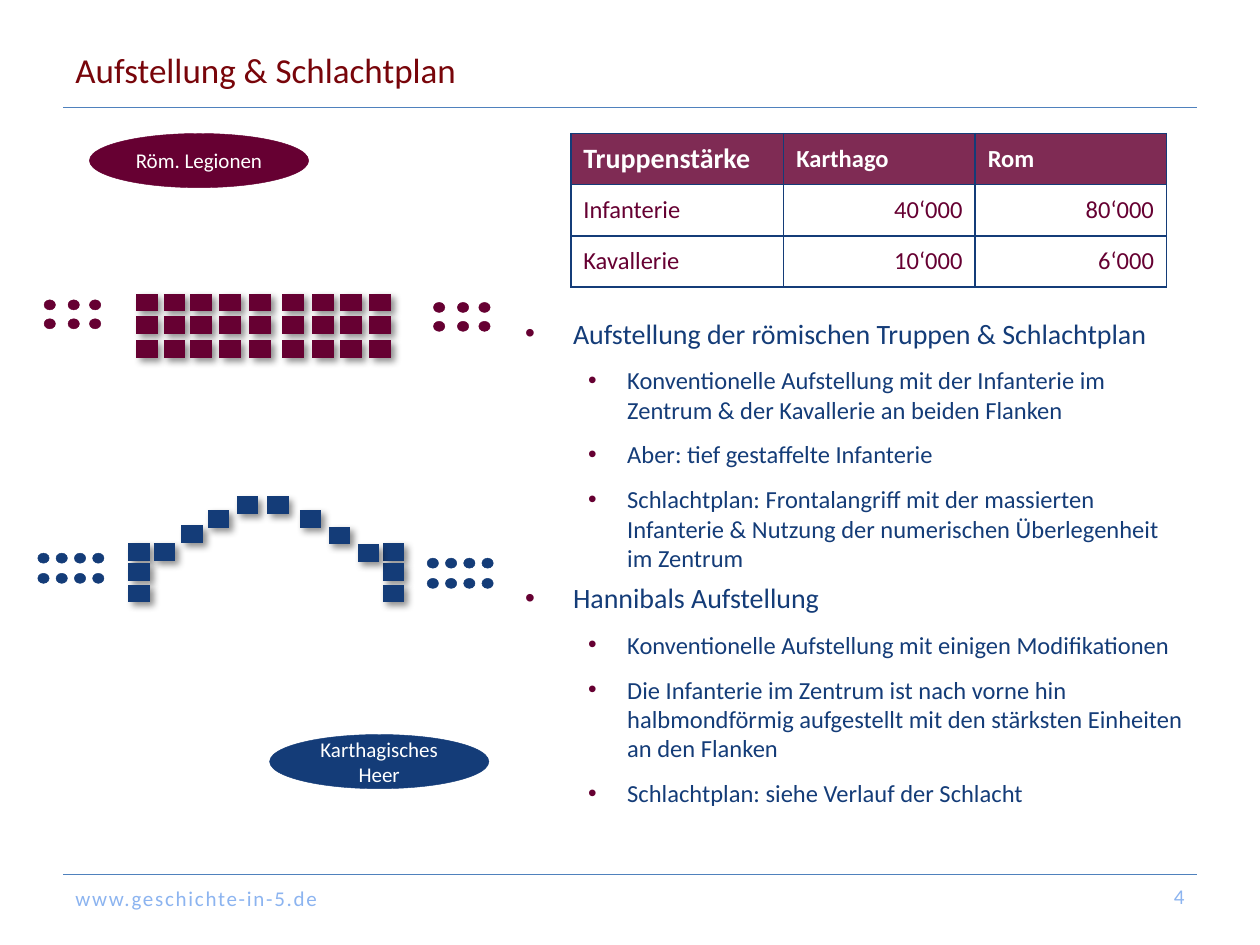
from itertools import product

from lxml import etree
from pptx import Presentation
from pptx.dml.color import RGBColor
from pptx.enum.shapes import MSO_CONNECTOR as Connector, MSO_SHAPE as Shape
from pptx.enum.text import MSO_ANCHOR as Anchor, PP_ALIGN as Align
from pptx.oxml import parse_xml
from pptx.oxml.ns import nsdecls, qn
from pptx.util import Inches, Pt

WINE = RGBColor(0x66, 0x00, 0x32)
NAVY = RGBColor(0x14, 0x3C, 0x78)
TITLE_RED = RGBColor(0x78, 0x05, 0x0A)
PALE_BLUE = RGBColor(0x8C, 0xB4, 0xF0)
RULE_BLUE = RGBColor(0x4F, 0x81, 0xBD)
WHITE = RGBColor(0xFF, 0xFF, 0xFF)

STRENGTHS = [
    ("Truppenstärke", "Karthago", "Rom"),
    ("Infanterie", "40‘000", "80‘000"),
    ("Kavallerie", "10‘000", "6‘000"),
]
ROMAN_PLAN = [
    "Aufstellung der römischen Truppen & Schlachtplan",
    "Konventionelle Aufstellung mit der Infanterie im Zentrum & der Kavallerie an beiden Flanken",
    "Aber: tief gestaffelte Infanterie",
    "Schlachtplan: Frontalangriff mit der massierten Infanterie & Nutzung der numerischen Überlegenheit im Zentrum",
]
HANNIBAL_PLAN = [
    "Hannibals Aufstellung",
    "Konventionelle Aufstellung mit einigen Modifikationen",
    "Die Infanterie im Zentrum ist nach vorne hin halbmondförmig aufgestellt mit den stärksten Einheiten an den Flanken",
    "Schlachtplan: siehe Verlauf der Schlacht",
]


def add_run(paragraph, text, size, color, bold=False):
    """Append one formatted run and return it."""
    run = paragraph.add_run()
    run.text = text
    run.font.name = "Calibri"
    run.font.size = Pt(size)
    run.font.bold = bold
    run.font.color.rgb = color
    return run


def add_label(slide, box, text, size, color, anchor=Anchor.MIDDLE, align=Align.LEFT):
    """Place a one-line text box and return its run."""
    frame = slide.shapes.add_textbox(*map(Inches, box)).text_frame
    frame.word_wrap = True
    frame.vertical_anchor = anchor
    paragraph = frame.paragraphs[0]
    paragraph.alignment = align
    return add_run(paragraph, text, size, color)


def add_line(shapes, start, end, color, width, shadow=False):
    """Draw a straight line, with or without a drop shadow."""
    line = shapes.add_connector(Connector.STRAIGHT, *map(Inches, (*start, *end)))
    line.line.color.rgb = color
    line.line.width = Pt(width)
    effects = etree.SubElement(line._element.spPr, qn("a:effectLst"))
    if shadow:
        effects.append(parse_xml(
            f'<a:outerShdw {nsdecls("a")} blurRad="{Pt(4)}" dist="{Pt(3)}" dir="2700000" algn="tl" '
            'rotWithShape="0"><a:srgbClr val="000000"><a:alpha val="43000"/></a:srgbClr></a:outerShdw>'))


def add_ellipse(shapes, box, color):
    """Draw a filled ellipse and return it."""
    ellipse = shapes.add_shape(Shape.OVAL, *map(Inches, box))
    ellipse.shadow.inherit = False
    ellipse.fill.solid()
    ellipse.fill.fore_color.rgb = color
    ellipse.line.color.rgb = color
    ellipse.line.width = Pt(0.25)
    return ellipse


def add_frame(slide, left, width):
    """Place the title, the two rules and the footer."""
    for y in (0.85, 6.94):
        add_line(slide.shapes, (left, y), (left + width, y), RULE_BLUE, 0.25)
    add_label(slide, (left, 0.3, 7.38, 0.51), "Aufstellung & Schlachtplan", 20, TITLE_RED)
    address = add_label(slide, (left, 6.98, 5.63, 0.3), "www.geschichte-in-5.de", 12, PALE_BLUE, Anchor.TOP)
    address._r.get_or_add_rPr().set("spc", "100")
    add_label(slide, (left + width - 2.33, 6.95, 2.33, 0.33), "4", 12, PALE_BLUE, align=Align.RIGHT)


def style_cell(cell, fill):
    """Give a cell a translucent fill and a thin navy border."""
    cell.fill.solid()
    cell.fill.fore_color.rgb = fill
    properties = cell._tc.get_or_add_tcPr()
    etree.SubElement(properties.find(".//" + qn("a:srgbClr")), qn("a:alpha")).set("val", "83000")
    for index, side in enumerate(("lnL", "lnR", "lnT", "lnB")):
        properties.insert(index, parse_xml(
            f'<a:{side} {nsdecls("a")} w="{Pt(1)}"><a:solidFill><a:srgbClr val="{NAVY}"/>'
            f'</a:solidFill></a:{side}>'))


def add_strength_table(slide, box):
    """Place the table of troop strengths."""
    table = slide.shapes.add_table(3, 3, *map(Inches, box)).table
    for column, width in zip(table.columns, (1.69, 1.52, 1.52)):
        column.width = Inches(width)
    for row, column in product(range(3), range(3)):
        cell = table.cell(row, column)
        header = row == 0
        style_cell(cell, WINE if header else WHITE)
        cell.vertical_anchor = Anchor.MIDDLE
        paragraph = cell.text_frame.paragraphs[0]
        paragraph.alignment = Align.RIGHT if row and column else Align.LEFT
        size = 16 if row == column == 0 else 14
        add_run(paragraph, STRENGTHS[row][column], size, WHITE if header else WINE, header)


def add_bullets(slide, box, lines):
    """Place a heading bullet followed by its second-level bullets."""
    frame = slide.shapes.add_textbox(*map(Inches, box)).text_frame
    frame.word_wrap = True
    for index, text in enumerate(lines):
        paragraph = frame.add_paragraph() if index else frame.paragraphs[0]
        margin, indent, size = (0.81, -0.31, 14) if index else (0.38, -0.38, 16)
        paragraph.level = 1 if index else 0
        paragraph.space_before = Pt(0.2 * size if index else 0)
        paragraph.space_after = Pt(6)
        properties = paragraph._p.get_or_add_pPr()
        properties.set("marL", str(Inches(margin)))
        properties.set("indent", str(Inches(indent)))
        color = etree.SubElement(properties, qn("a:buClr"))
        etree.SubElement(color, qn("a:srgbClr")).set("val", str(WINE))
        etree.SubElement(properties, qn("a:buFont")).set("typeface", "Arial")
        etree.SubElement(properties, qn("a:buChar")).set("char", "•")
        add_run(paragraph, text, size, NAVY)


def add_army(slide, origin, color, infantry, cavalry, name, name_offset):
    """Draw one army as a group of blocks, dots and a name, offset from its origin."""
    left, top = origin
    shapes = slide.shapes.add_group_shape().shapes
    for x, y in infantry:
        add_line(shapes, (left + x, top + y), (left + x + 0.17, top + y), color, 10, shadow=True)
    for x, y in cavalry:
        add_ellipse(shapes, (left + x, top + y, 0.09, 0.08), color)
    x, y = name_offset
    label = add_ellipse(shapes, (left + x, top + y, 1.74, 0.43), color)
    frame = label.text_frame
    frame.word_wrap = True
    frame.vertical_anchor = Anchor.MIDDLE
    frame.paragraphs[0].alignment = Align.CENTER
    add_run(frame.paragraphs[0], name, 12, WHITE)


def add_roman_army(slide, origin):
    """Draw the Roman army: three deep ranks with cavalry on both flanks."""
    files = (0.73, 0.95, 1.16, 1.39, 1.63, 1.89, 2.13, 2.35, 2.58)
    infantry = product(files, (1.34, 1.52, 1.71))
    cavalry = [(flank + x, y + rank) for flank, y in ((0, 1.32), (3.09, 1.34))
               for x, rank in product((0, 0.19, 0.36), (0, 0.15))]
    add_army(slide, origin, WINE, infantry, cavalry, "Röm. Legionen", (0.36, 0))


def add_carthaginian_army(slide, origin):
    """Draw the Carthaginian army: a crescent between two columns and cavalry."""
    columns = product((0.72, 2.74), (0.37, 0.53, 0.7))
    crescent = zip((0.92, 1.14, 1.35, 1.58, 1.82, 2.08, 2.31, 2.54),
                   (0.37, 0.23, 0.11, 0, 0, 0.11, 0.24, 0.38))
    cavalry = [(flank + 0.145 * file, y + rank) for flank, y in ((0, 0.38), (3.09, 0.42))
               for file, rank in product(range(4), (0, 0.16))]
    add_army(slide, origin, NAVY, [*columns, *crescent], cavalry, "Karthagisches Heer", (1.84, 1.82))


def main():
    """Build and save the slide."""
    presentation = Presentation()
    presentation.slide_width, presentation.slide_height = Inches(10), Inches(7.5)
    slide = presentation.slides.add_slide(presentation.slide_layouts[6])
    add_frame(slide, 0.5, 9)
    add_bullets(slide, (4.07, 2.46, 5.43, 2.07), ROMAN_PLAN)
    add_strength_table(slide, (4.53, 1.06, 4.73, 1.22))
    add_bullets(slide, (4.07, 4.56, 5.43, 2.35), HANNIBAL_PLAN)
    add_roman_army(slide, (0.35, 1.06))
    add_carthaginian_army(slide, (0.3, 4.01))
    presentation.save("out.pptx")


if __name__ == "__main__":
    main()
